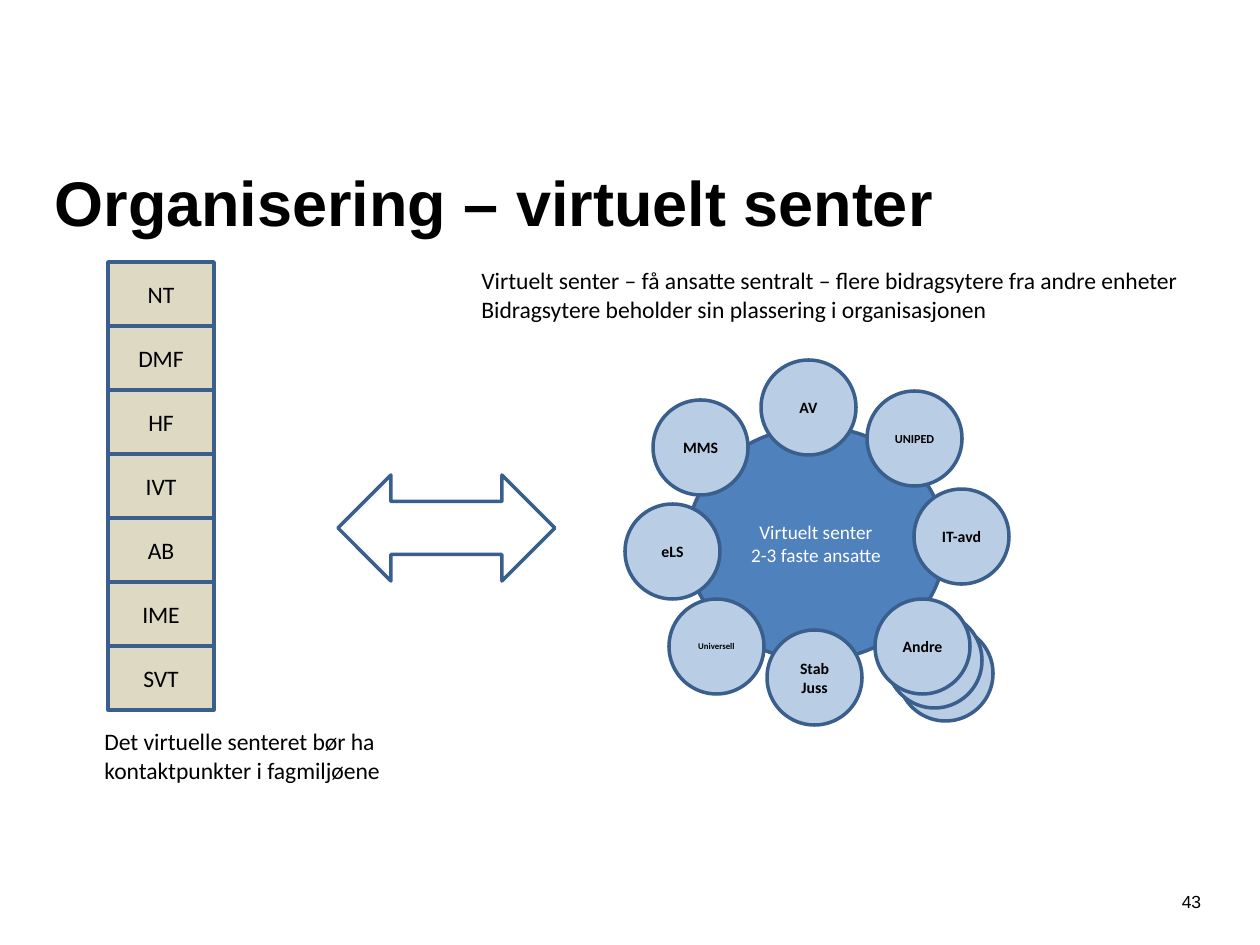
from pptx import Presentation
from pptx.dml.color import RGBColor
from pptx.enum.shapes import MSO_SHAPE
from pptx.enum.text import MSO_ANCHOR, PP_ALIGN
from pptx.util import Emu, Pt

RECTANGLE, OVAL = MSO_SHAPE.RECTANGLE, MSO_SHAPE.OVAL
DOUBLE_ARROW = MSO_SHAPE.LEFT_RIGHT_ARROW
LEFT, CENTER = PP_ALIGN.LEFT, PP_ALIGN.CENTER
TOP, MIDDLE = MSO_ANCHOR.TOP, MSO_ANCHOR.MIDDLE

EMU_PER_PX = 914400 / 126
BLACK, WHITE, OUTLINE = "000000", "FFFFFF", "3A5F8C"
HUB_BLUE, UNIT_BLUE, FACULTY_BEIGE = "4F81BD", "B9CDE5", "DDD9C3"

FACULTIES = ["NT", "DMF", "HF", "IVT", "AB", "IME", "SVT"]
FACULTY_LEFT, FACULTY_TOP, FACULTY_WIDTH, FACULTY_HEIGHT = 108, 262, 106, 64

UNIT_SIZE = 95
UNITS = [
    ("IT-avd", 914, 489, 9),
    ("AV", 761, 360, 9),
    ("UNIPED", 867, 391, 7),
    ("MMS", 653, 400, 9),
    ("Universell", 669, 599, 5),
    ("eLS", 625, 504, 9),
    ("", 898, 626, 9),
    ("", 887, 613, 9),
    ("Stab\nJuss", 767, 630, 9),
    ("Andre", 875, 599, 9),
]


def px(length):
    return Emu(round(length * EMU_PER_PX))


def color(value):
    return RGBColor.from_string(value)


def write(shape, text, size=13.5, font="Calibri", ink=BLACK, bold=False,
          align=LEFT, anchor=TOP):
    frame = shape.text_frame
    frame.word_wrap = True
    frame.vertical_anchor = anchor
    frame.text = text
    for paragraph in frame.paragraphs:
        paragraph.alignment = align
        paragraph.font.size = Pt(size)
        paragraph.font.name = font
        paragraph.font.bold = bold
        paragraph.font.color.rgb = color(ink)


class SlideBuilder:
    """Holds the outline style and the current slide."""

    def __init__(self, slide, outline=OUTLINE, line_width=2):
        self.slide = slide
        self.outline = outline
        self.line_width = line_width

    def title(self, text, left, top, width, height):
        shape = self.slide.shapes.title
        shape.left, shape.top = px(left), px(top)
        shape.width, shape.height = px(width), px(height)
        write(shape, text, size=36, font="Arial", bold=True, anchor=MIDDLE)

    def text(self, text, left, top, width, height, **style):
        box = self.slide.shapes.add_textbox(px(left), px(top), px(width), px(height))
        write(box, text, **style)

    def shape(self, kind, left, top, width, height, fill, text="", **style):
        shape = self.slide.shapes.add_shape(kind, px(left), px(top), px(width), px(height))
        shape.shadow.inherit = False
        shape.fill.solid()
        shape.fill.fore_color.rgb = color(fill)
        shape.line.color.rgb = color(self.outline)
        shape.line.width = Pt(self.line_width)
        if text:
            write(shape, text, align=CENTER, anchor=MIDDLE, **style)


def main():
    presentation = Presentation()
    presentation.slide_width, presentation.slide_height = px(1260), px(945)
    builder = SlideBuilder(presentation.slides.add_slide(presentation.slide_layouts[5]))

    builder.title("Organisering – virtuelt senter", 42, 133, 1086, 137)
    builder.text("43", 1168, 885, 47, 50, size=10, font="Arial", align=CENTER)

    builder.shape(OVAL, 687, 427, 258, 233, HUB_BLUE,
                  "Virtuelt senter\n2-3 faste ansatte", size=11, ink=WHITE)
    for name, left, top, size in UNITS:
        builder.shape(OVAL, left, top, UNIT_SIZE, UNIT_SIZE, UNIT_BLUE,
                      name, size=size, bold=True)
    builder.text("Virtuelt senter – få ansatte sentralt – flere bidragsytere fra andre enheter\n"
                 "Bidragsytere beholder sin plassering i organisasjonen", 469, 260, 727, 71)

    for row, name in enumerate(FACULTIES):
        builder.shape(RECTANGLE, FACULTY_LEFT, FACULTY_TOP + row * FACULTY_HEIGHT,
                      FACULTY_WIDTH, FACULTY_HEIGHT, FACULTY_BEIGE, name)
    builder.text("Det virtuelle senteret bør ha kontaktpunkter i fagmiljøene", 92, 721, 398, 71)
    builder.shape(DOUBLE_ARROW, 338, 475, 217, 106, WHITE)

    presentation.save("out.pptx")


if __name__ == "__main__":
    main()
